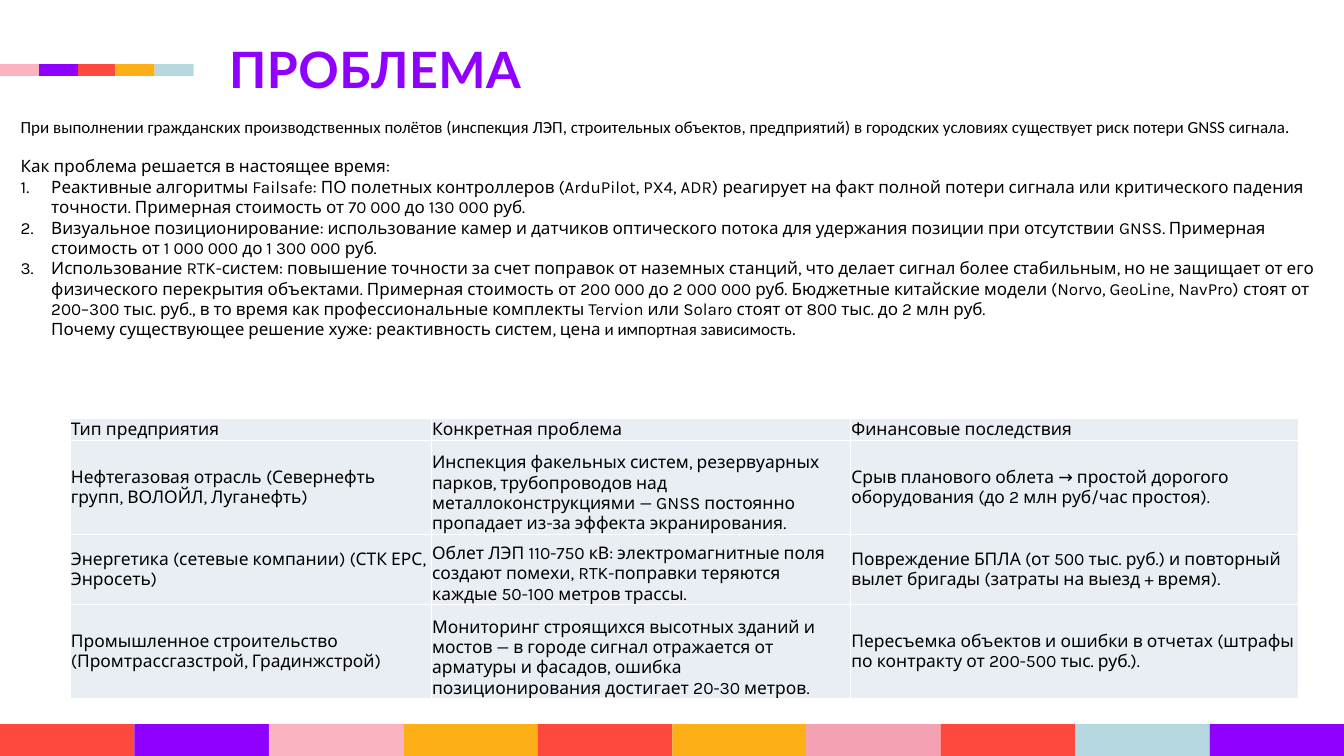
import pptx
import pptx.util
import pptx.dml.color
import pptx.enum.shapes
import pptx.enum.text
import pptx.oxml.ns
import lxml.etree

RGB = pptx.dml.color.RGBColor
Pt = pptx.util.Pt
ANCHOR = pptx.enum.text.MSO_ANCHOR
SCALE = 9144  # EMU in one px, 100 px to the inch
WIDE, HIGH = 2199, 1237

RED = RGB(0xFD, 0x49, 0x3D)
VIOLET = RGB(0x8F, 0x00, 0xFF)
PINK = RGB(0xFB, 0xB3, 0xC1)
ROSE = RGB(0xF4, 0xA1, 0xB3)
AMBER = RGB(0xFC, 0xAF, 0x17)
SKY = RGB(0xB5, 0xD8, 0xE1)
PALE = RGB(0xE9, 0xED, 0xF4)
BLACK = RGB(0, 0, 0)

TITLE = {"name": "Lato", "size": Pt(59), "bold": True}
PLAIN = {"name": "Calibri", "size": Pt(20)}
BODY = {"name": "Karla", "size": Pt(20)}
CELL = {"name": "Karla", "size": Pt(20.5)}

INTRO = "При выполнении гражданских производственных полётов (инспекция ЛЭП, строительных объектов, предприятий) в городских условиях существует риск потери GNSS сигнала."
LEAD = "Как проблема решается в настоящее время:"
WAYS = [
    "Реактивные алгоритмы Failsafe: ПО полетных контроллеров (ArduPilot, PX4, ADR) реагирует на факт полной потери сигнала или критического падения точности. Примерная стоимость от 70 000 до 130 000 руб.",
    "Визуальное позиционирование: использование камер и датчиков оптического потока для удержания позиции при отсутствии GNSS. Примерная стоимость от 1 000 000 до 1 300 000 руб.",
    "Использование RTK-систем: повышение точности за счет поправок от наземных станций, что делает сигнал более стабильным, но не защищает от его физического перекрытия объектами. Примерная стоимость от 200 000 до 2 000 000 руб. Бюджетные китайские модели (Norvo, GeoLine, NavPro) стоят от 200–300 тыс. руб., в то время как профессиональные комплекты Tervion или Solaro стоят от 800 тыс. до 2 млн руб.",
]
WORSE = "Почему существующее решение хуже: реактивность систем, цена"
ALSO = " и импортная зависимость."

ROWS = [
    ("Тип предприятия", "Конкретная проблема", "Финансовые последствия"),
    ("Нефтегазовая отрасль (Севернефть групп, ВОЛОЙЛ, Луганефть)",
     "Инспекция факельных систем, резервуарных парков, трубопроводов над металлоконструкциями — GNSS постоянно пропадает из-за эффекта экранирования.",
     "Срыв планового облета → простой дорогого оборудования (до 2 млн руб/час простоя)."),
    ("Энергетика (сетевые компании) (СТК ЕРС, Энросеть)",
     "Облет ЛЭП 110-750 кВ: электромагнитные поля создают помехи, RTK-поправки теряются каждые 50-100 метров трассы.",
     "Повреждение БПЛА (от 500 тыс. руб.) и повторный вылет бригады (затраты на выезд + время)."),
    ("Промышленное строительство (Промтрассгазстрой, Градинжстрой)",
     "Мониторинг строящихся высотных зданий и мостов — в городе сигнал отражается от арматуры и фасадов, ошибка позиционирования достигает 20-30 метров.",
     "Пересъемка объектов и ошибки в отчетах (штрафы по контракту от 200-500 тыс. руб.)."),
]


def px(*sizes):
    return [pptx.util.Emu(size * SCALE) for size in sizes]


def write(para, text, style, color=BLACK):
    run = para.add_run()
    run.text = text
    for key, value in style.items():
        setattr(run.font, key, value)
    run.font.color.rgb = color
    return run


def frame(slide, box, top=5):
    text = slide.shapes.add_textbox(*px(*box)).text_frame
    text.word_wrap = True
    text.margin_top = px(top)[0]
    return text


def band(slide, box, parts):
    """Row of coloured blocks; parts are (width, colour)."""
    left, top, _, high = box
    for wide, color in parts:
        block = slide.shapes.add_shape(
            pptx.enum.shapes.MSO_SHAPE.RECTANGLE, *px(left, top, wide, high))
        block.shadow.inherit = False
        block.fill.solid()
        block.fill.fore_color.rgb = color
        block.line.fill.background()
        left += wide


def title(slide, box):
    text = frame(slide, box, 15)
    text.margin_left = text.margin_right = text.margin_bottom = 0
    para = text.paragraphs[0]
    para.line_spacing = Pt(61.9)
    run = write(para, "ПРОБЛЕМА", TITLE, VIOLET)
    run.font._element.set("spc", "60")


def indent(para, number):
    left = px(50)[0]
    props = para._p.get_or_add_pPr()
    props.set("marL", str(left))
    props.set("indent", str(-left if number else 0))
    if number:
        mark = lxml.etree.SubElement(props, pptx.oxml.ns.qn("a:buAutoNum"))
        mark.set("type", "arabicPeriod")


def story(slide, box):
    text = frame(slide, box)
    write(text.paragraphs[0], INTRO, PLAIN)
    para = text.add_paragraph()
    para.space_before = Pt(23)
    write(para, LEAD, BODY)
    for way in WAYS:
        para = text.add_paragraph()
        indent(para, True)
        write(para, way, BODY)
    para = text.add_paragraph()
    indent(para, False)
    write(para, WORSE, BODY)
    write(para, ALSO, PLAIN)


def border(cell):
    props = cell._tc.get_or_add_tcPr()
    qn = pptx.oxml.ns.qn
    for side in ("lnL", "lnR", "lnT", "lnB"):
        line = lxml.etree.SubElement(props, qn("a:" + side), w="12700")
        fill = lxml.etree.SubElement(line, qn("a:solidFill"))
        lxml.etree.SubElement(fill, qn("a:srgbClr"), val="FFFFFF")


def grid(slide, box, wides, highs):
    table = slide.shapes.add_table(len(highs), len(wides), *px(*box)).table
    table.first_row = table.horz_banding = False
    for col, wide in zip(table.columns, px(*wides)):
        col.width = wide
    for row, high in zip(table.rows, px(*highs)):
        row.height = high
    for i, texts in enumerate(ROWS):
        for j, text in enumerate(texts):
            cell = table.cell(i, j)
            border(cell)
            cell.fill.solid()
            cell.fill.fore_color.rgb = PALE
            low = i == 0 or j == 1
            cell.vertical_anchor = ANCHOR.BOTTOM if low else ANCHOR.MIDDLE
            cell.margin_left = cell.margin_right = cell.margin_top = px(1)[0]
            cell.margin_bottom = 0
            write(cell.text_frame.paragraphs[0], text, CELL)


def main():
    deck = pptx.Presentation()
    deck.slide_width, deck.slide_height = px(WIDE, HIGH)
    slide = deck.slides.add_slide(deck.slide_layouts[6])

    # Colour bands: foot of the slide, then beside the title
    foot = [RED, VIOLET, PINK, AMBER, RED, AMBER, ROSE, RED, SKY, VIOLET]
    edges = [round(WIDE * i / len(foot)) for i in range(len(foot) + 1)]
    wides = [end - start for start, end in zip(edges, edges[1:])]
    band(slide, (0, 1185, WIDE, 52), zip(wides, foot))
    band(slide, (0, 105, 317, 19),
         zip((64, 64, 61, 64, 64), (PINK, VIOLET, RED, AMBER, SKY)))

    # Heading, text and table
    title(slide, (375, 60, 669, 102))
    story(slide, (24, 185, 2147, 481))
    grid(slide, (115, 685, 2009, 458), (591, 686, 732), (35, 154, 115, 154))

    deck.save("out.pptx")


if __name__ == "__main__":
    main()
